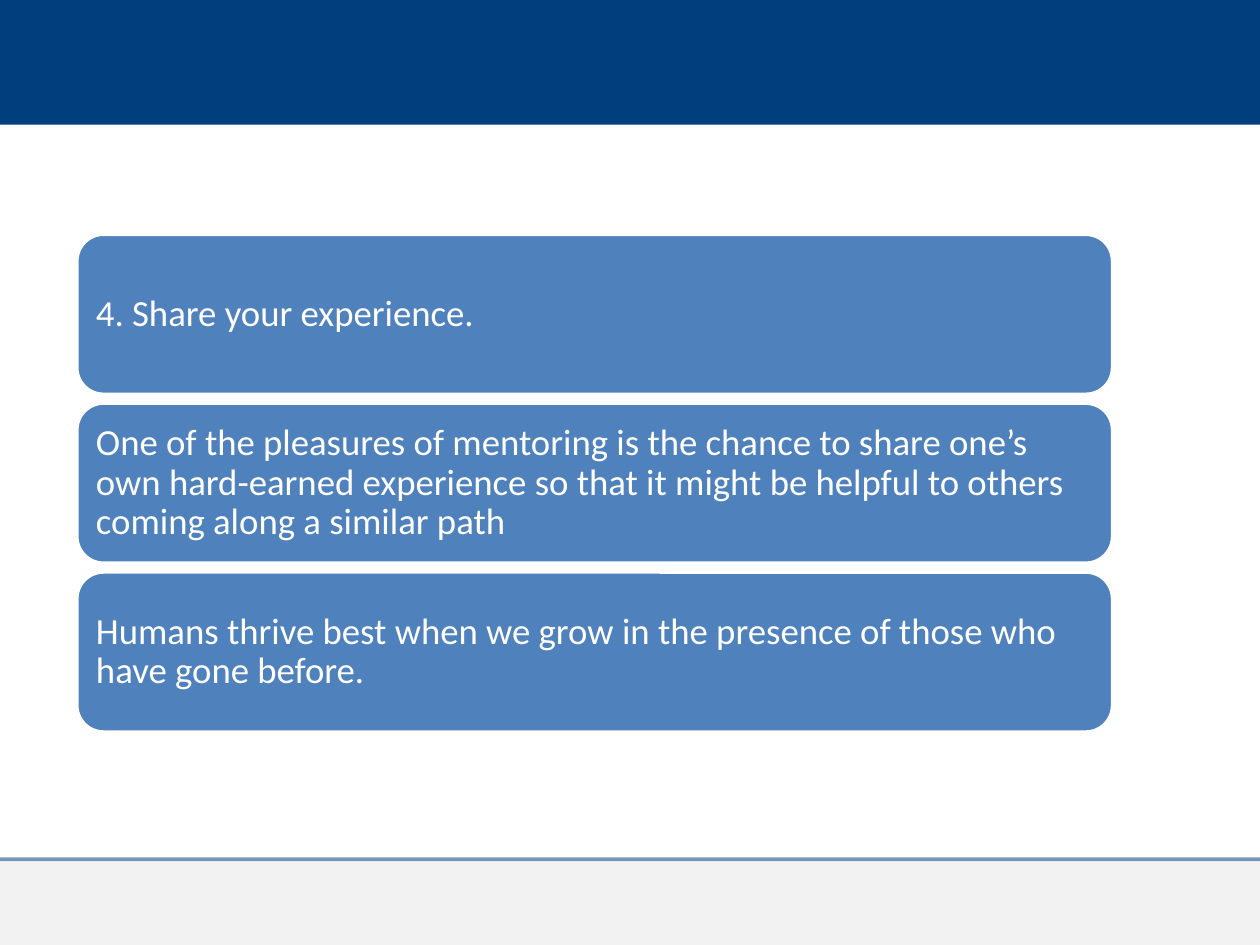
"""Build a mentoring slide with three stacked statement cards."""
from lxml import etree
from pptx import Presentation
from pptx.dml.color import RGBColor
from pptx.enum.shapes import MSO_CONNECTOR, MSO_SHAPE
from pptx.enum.text import MSO_ANCHOR, PP_ALIGN
from pptx.oxml.ns import qn
from pptx.util import Inches, Pt

RECTANGLE = MSO_SHAPE.RECTANGLE
ROUNDED = MSO_SHAPE.ROUNDED_RECTANGLE
STRAIGHT = MSO_CONNECTOR.STRAIGHT
MIDDLE = MSO_ANCHOR.MIDDLE
LEFT = PP_ALIGN.LEFT

THEME = {
    "navy": RGBColor(0x00, 0x3E, 0x7E),
    "gray": RGBColor(0x80, 0x80, 0x80),
    "card": RGBColor(0x4F, 0x81, 0xBD),
    "white": RGBColor(0xFF, 0xFF, 0xFF),
    "font": "Calibri",
    "size": Pt(21),
    "rule": Pt(2.25),
    "outline": Pt(2),
}
STATEMENTS = [
    "4. Share your experience.",
    "One of the pleasures of mentoring is the chance to share one’s own "
    "hard-earned experience so that it might be helpful to others coming "
    "along a similar path",
    "Humans thrive best when we grow in the presence of those who have gone before.",
]
CARD_TOP, CARD_STEP = 1.86, 1.34
FOOTER_TOP = 6.82


def add_block(page, kind, left, top, width, height, color):
    block = page.shapes.add_shape(
        kind, Inches(left), Inches(top), Inches(width), Inches(height)
    )
    block.shadow.inherit = False
    block.fill.solid()
    block.fill.fore_color.rgb = color
    block.line.fill.background()
    return block


def set_opacity(shape, percent):
    color = next(shape._element.spPr.iter(qn("a:srgbClr")))
    etree.SubElement(color, qn("a:alpha"), val=str(percent * 1000))


deck = Presentation()
deck.slide_width, deck.slide_height = Inches(10), Inches(7.5)
page = deck.slides.add_slide(deck.slide_layouts[6])

add_block(page, RECTANGLE, 0, 0, 10, 0.99, THEME["navy"])
footer = add_block(page, RECTANGLE, 0, FOOTER_TOP, 10, 0.68, THEME["gray"])
set_opacity(footer, 10)

rule = page.shapes.add_connector(
    STRAIGHT, Inches(0), Inches(FOOTER_TOP), Inches(10), Inches(FOOTER_TOP)
)
rule.line.color.rgb = THEME["navy"]
rule.line.width = THEME["rule"]
set_opacity(rule, 52)
etree.SubElement(rule._element.spPr, qn("a:effectLst"))

frame_format = {
    "word_wrap": True,
    "vertical_anchor": MIDDLE,
    **{f"margin_{side}": Inches(0.09) for side in ("left", "top", "right", "bottom")},
}
for index, statement in enumerate(STATEMENTS):
    card = add_block(
        page, ROUNDED, 0.61, CARD_TOP + index * CARD_STEP, 8.22, 1.27, THEME["card"]
    )
    card.line.color.rgb = THEME["white"]
    card.line.width = THEME["outline"]
    frame = card.text_frame
    for name, value in frame_format.items():
        setattr(frame, name, value)
    para = frame.paragraphs[0]
    para.alignment = LEFT
    para.line_spacing = 0.9
    span = para.add_run()
    span.text = statement
    for name, value in {"name": THEME["font"], "size": THEME["size"]}.items():
        setattr(span.font, name, value)
    span.font.color.rgb = THEME["white"]

deck.save("out.pptx")
